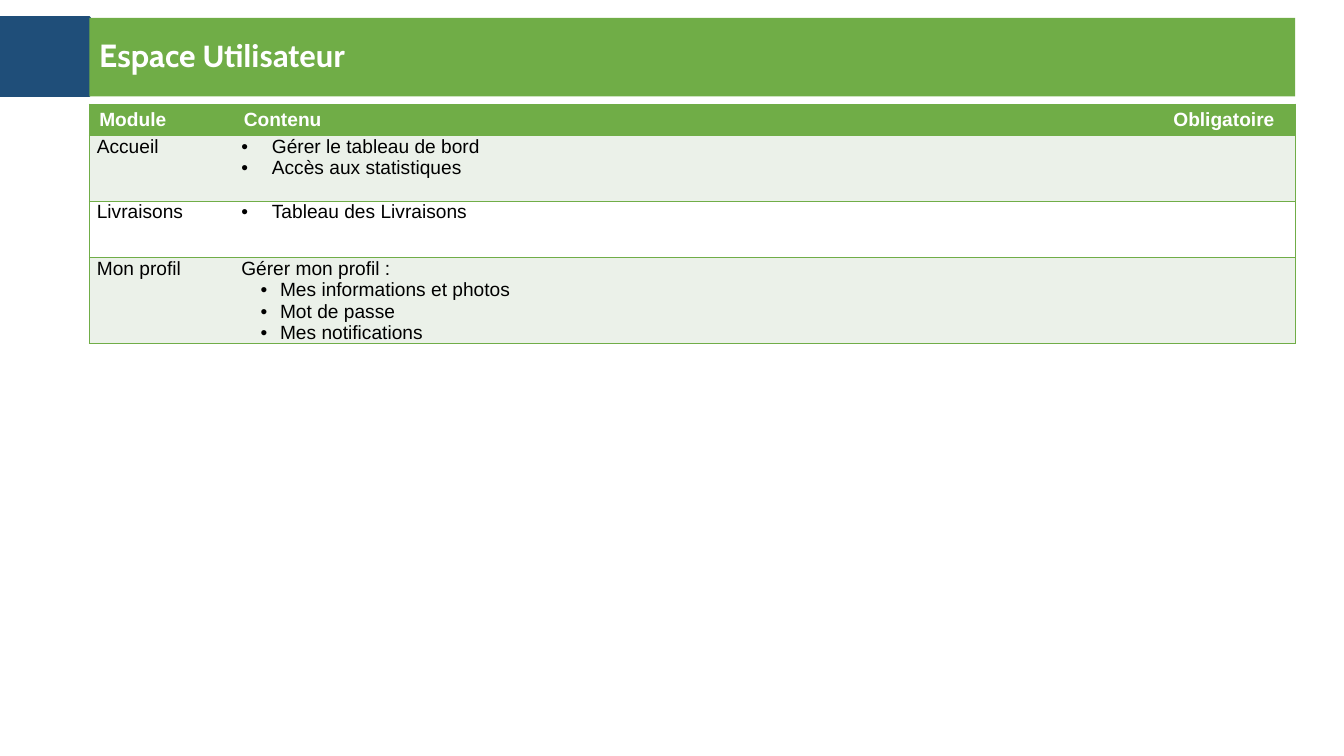
from lxml import etree
from pptx import Presentation
from pptx.dml.color import RGBColor
from pptx.enum.shapes import MSO_SHAPE
from pptx.enum.text import MSO_ANCHOR, PP_ALIGN
from pptx.oxml.ns import qn
from pptx.util import Cm, Pt

RECTANGLE = MSO_SHAPE.RECTANGLE
MIDDLE = MSO_ANCHOR.MIDDLE
LEFT = PP_ALIGN.LEFT
COLORS = {"green": "70AD47", "blue": "1F4E79", "pale": "EBF1E9",
          "white": "FFFFFF", "black": "000000"}
BODY_LEFT = 2.31
BODY_WIDTH = 31.13
COLUMN_WIDTHS = [3.73, 24, 3.4]
# Left margin and first-line indent of each kind of list, in centimetres
BULLETS = {"wide": (0.79, -0.79), "inner": (1.0, -0.5)}
ROWS = [
    (0.79, "green", [[("Module", None)], [("Contenu", None)], [("Obligatoire", None)]]),
    (1.69, "pale", [[("Accueil", None)],
                    [("Gérer le tableau de bord", "wide"),
                     ("Accès aux statistiques", "wide")], []]),
    (1.46, "white", [[("Livraisons", None)], [("Tableau des Livraisons", "wide")], []]),
    (2.22, "pale", [[("Mon profil", None)],
                    [("Gérer mon profil :", None),
                     ("Mes informations et photos", "inner"),
                     ("Mot de passe", "inner"),
                     ("Mes notifications", "inner")], []]),
]


def add_span(para, text, color, **formats):
    span = para.add_run()
    span.text = text
    span.font.color.rgb = RGBColor.from_string(COLORS[color])
    for name, value in formats.items():
        setattr(span.font, name, value)


deck = Presentation()
deck.slide_width, deck.slide_height = Cm(34.7), Cm(19.51)
page = deck.slides.add_slide(deck.slide_layouts[6])

# Title band
bands = []
for left, width, height, color in [(0, BODY_LEFT, 2.01, "blue"),
                                   (BODY_LEFT, BODY_WIDTH, 2.03, "green")]:
    band = page.shapes.add_shape(RECTANGLE, Cm(left), Cm(0.46), Cm(width), Cm(height))
    band.shadow.inherit = False
    band.fill.solid()
    band.fill.fore_color.rgb = RGBColor.from_string(COLORS[color])
    bands.append(band)
accent, title = bands
accent.line.color.rgb = RGBColor.from_string(COLORS["blue"])
accent.line.width = Pt(2)
title.line.fill.background()
title.text_frame.vertical_anchor = MIDDLE
title.text_frame.word_wrap = True
title_para = title.text_frame.paragraphs[0]
title_para.alignment = LEFT
title_para.line_spacing = 0.9
add_span(title_para, "Espace ", "white", name="Cabin", size=Pt(23.4), bold=True)
add_span(title_para, "Utilisateur", "white", name="Calibri", size=Pt(24), bold=True)

# Module table
table = page.shapes.add_table(
    len(ROWS), len(COLUMN_WIDTHS), Cm(BODY_LEFT), Cm(2.69),
    Cm(BODY_WIDTH), Cm(sum(height for height, _, _ in ROWS))).table
table.first_row = table.horz_banding = False
for column, width in zip(table.columns, COLUMN_WIDTHS):
    column.width = Cm(width)

last_column = len(COLUMN_WIDTHS) - 1
for row_index, (height, fill, contents) in enumerate(ROWS):
    table.rows[row_index].height = Cm(height)
    is_header = row_index == 0
    for column_index, lines in enumerate(contents):
        cell = table.cell(row_index, column_index)
        if not is_header:
            cell.margin_left = cell.margin_right = Cm(0.19)
            cell.margin_top = cell.margin_bottom = 0

        properties = cell._tc.get_or_add_tcPr()
        visible = {"lnL": column_index == 0, "lnR": column_index == last_column,
                   "lnT": True, "lnB": True}
        for side, is_visible in visible.items():
            border = etree.SubElement(properties, qn(f"a:{side}"), w=str(Pt(1)))
            if is_visible:
                paint = etree.SubElement(border, qn("a:solidFill"))
                etree.SubElement(paint, qn("a:srgbClr"), val=COLORS["green"])
            else:
                etree.SubElement(border, qn("a:noFill"))
        cell.fill.solid()
        cell.fill.fore_color.rgb = RGBColor.from_string(COLORS[fill])

        box = cell.text_frame
        for line_index, (text, bullet) in enumerate(lines):
            para = box.paragraphs[0] if line_index == 0 else box.add_paragraph()
            add_span(para, text, "white" if is_header else "black",
                     name="Arial", size=Pt(14), bold=is_header)
            if bullet:
                margin, indent = BULLETS[bullet]
                settings = para._p.get_or_add_pPr()
                settings.set("marL", str(Cm(margin)))
                settings.set("indent", str(Cm(indent)))
                etree.SubElement(settings, qn("a:buFont"), typeface="Arial")
                etree.SubElement(settings, qn("a:buChar"), char="•")

deck.save("out.pptx")
